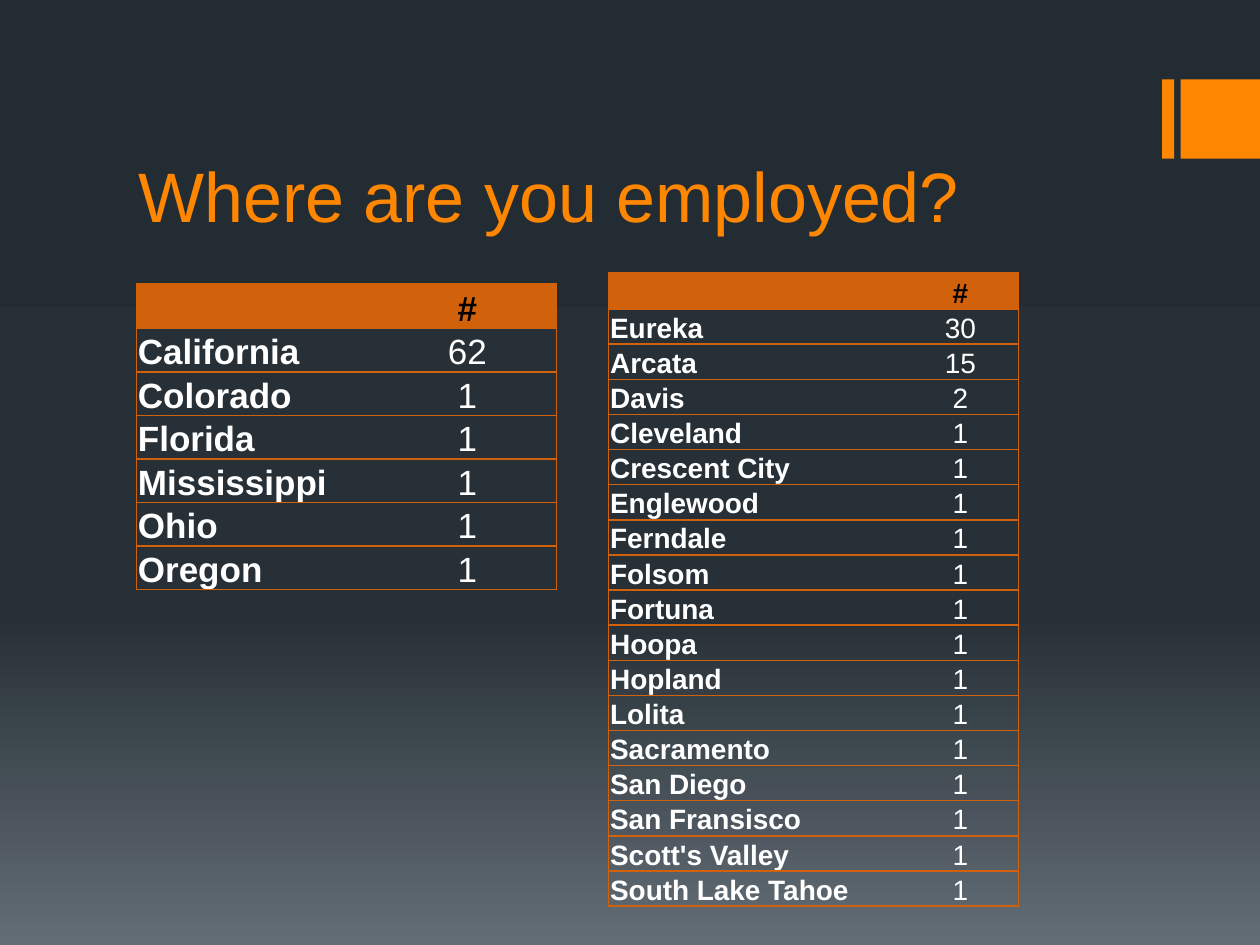
import copy

import lxml.etree
import pptx
import pptx.dml.color
import pptx.enum.shapes
import pptx.enum.text
import pptx.oxml.ns
import pptx.util
from pptx.util import Cm

FONT = "Arial"
ORANGE = "FF8600"
RUST = "D2610C"
BACKGROUND = [(0, "242C33"), (0.65, "273037"), (1, "636D76")]
STATES = [("", "#"), ("California", "62"), ("Colorado", "1"), ("Florida", "1"),
          ("Mississippi", "1"), ("Ohio", "1"), ("Oregon", "1")]
SINGLE_CITIES = ["Cleveland", "Crescent City", "Englewood", "Ferndale", "Folsom",
                 "Fortuna", "Hoopa", "Hopland", "Lolita", "Sacramento", "San Diego",
                 "San Fransisco", "Scott's Valley", "South Lake Tahoe"]
CITIES = [("", "#"), ("Eureka", "30"), ("Arcata", "15"), ("Davis", "2")]
CITIES += [(city, "1") for city in SINGLE_CITIES]


def color(value):
    """Turn a hex string into a colour."""
    return pptx.dml.color.RGBColor.from_string(value)


def paint_background(slide):
    """Fill the slide with a vertical three-stop gradient."""
    fill = slide.background.fill
    fill.gradient()
    fill.gradient_angle = 270
    first = fill.gradient_stops[0]._gs
    first.addnext(copy.deepcopy(first))
    for stop, (position, value) in zip(fill.gradient_stops, BACKGROUND):
        stop.position = position
        stop.color.rgb = color(value)


def add_block(slide, left, width):
    """Add one of the orange blocks at the right edge."""
    shape = slide.shapes.add_shape(
        pptx.enum.shapes.MSO_SHAPE.RECTANGLE, Cm(left), Cm(1.6), Cm(width), Cm(1.6))
    shape.shadow.inherit = False
    shape.fill.solid()
    shape.fill.fore_color.rgb = color(ORANGE)
    shape.line.fill.background()


def style_run(run, size, value, bold=False):
    """Set the font of a run."""
    run.font.name = FONT
    run.font.size = pptx.util.Pt(size)
    run.font.bold = bold
    run.font.color.rgb = color(value)


def add_title(slide, text):
    """Add the slide title, standing on the bottom of its box."""
    frame = slide.shapes.add_textbox(Cm(2.54), Cm(1.7), Cm(20.32), Cm(3.2)).text_frame
    frame.word_wrap = True
    frame.vertical_anchor = pptx.enum.text.MSO_ANCHOR.BOTTOM
    frame.text = text
    style_run(frame.paragraphs[0].runs[0], 40, ORANGE)


def set_border(cell, side, visible):
    """Draw or hide the border on one side of a cell."""
    line = lxml.etree.SubElement(
        cell._tc.get_or_add_tcPr(), pptx.oxml.ns.qn(f"a:ln{side}"), w="12700")
    if visible:
        fill = lxml.etree.SubElement(line, pptx.oxml.ns.qn("a:solidFill"))
        lxml.etree.SubElement(fill, pptx.oxml.ns.qn("a:srgbClr"), val=RUST)
    else:
        lxml.etree.SubElement(line, pptx.oxml.ns.qn("a:noFill"))


def fill_cell(cell, text, size, is_header, is_label):
    """Write and format one table cell."""
    cell.margin_left = cell.margin_right = cell.margin_top = Cm(0.03)
    cell.margin_bottom = 0
    cell.vertical_anchor = pptx.enum.text.MSO_ANCHOR.BOTTOM
    for side, visible in (("L", is_label), ("R", not is_label), ("T", True), ("B", True)):
        set_border(cell, side, visible)
    if is_header:
        cell.fill.solid()
        cell.fill.fore_color.rgb = color(RUST)
    else:
        cell.fill.background()
    cell.text_frame.text = text
    paragraph = cell.text_frame.paragraphs[0]
    if not is_label:
        paragraph.alignment = pptx.enum.text.PP_ALIGN.CENTER
    for run in paragraph.runs:
        style_run(run, size, "000000" if is_header else "FFFFFF", is_header or is_label)
    if not text:
        paragraph._p.get_or_add_endParaRPr().set("sz", str(size * 100))


def add_count_table(slide, rows, left, top, widths, heights, size):
    """Add a table of places and counts with a coloured header row."""
    header_height, row_height = heights
    total = header_height + row_height * (len(rows) - 1)
    table = slide.shapes.add_table(
        len(rows), 2, Cm(left), Cm(top), Cm(sum(widths)), Cm(total)).table
    table.horz_banding = False
    for column, width in zip(table.columns, widths):
        column.width = Cm(width)
    for index, values in enumerate(rows):
        table.rows[index].height = Cm(row_height if index else header_height)
        for column, text in enumerate(values):
            fill_cell(table.cell(index, column), text, size, index == 0, column == 0)


def main():
    """Build and save the slide."""
    presentation = pptx.Presentation()
    presentation.slide_width = Cm(25.4)
    presentation.slide_height = Cm(19.05)
    slide = presentation.slides.add_slide(presentation.slide_layouts[6])
    paint_background(slide)
    add_block(slide, 23.43, 0.24)
    add_block(slide, 23.8, 1.6)
    add_title(slide, "Where are you employed?")
    add_count_table(slide, STATES, 2.75, 5.72, (4.87, 3.6), (0.9, 0.82), 20)
    add_count_table(slide, CITIES, 12.27, 5.5, (5.92, 2.34), (0.73, 0.66), 16)
    presentation.save("out.pptx")


if __name__ == "__main__":
    main()
